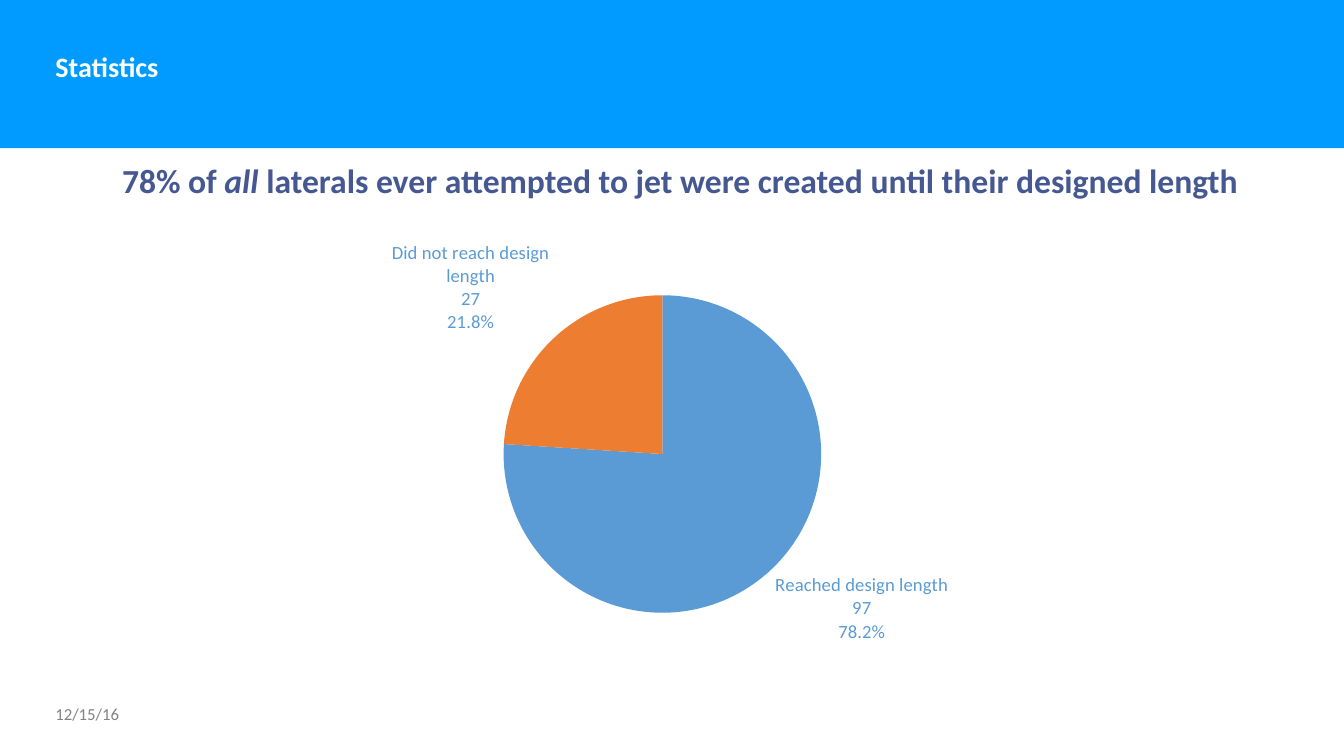
from dataclasses import dataclass

from lxml import etree
from pptx import Presentation
from pptx.chart.data import CategoryChartData
from pptx.dml.color import RGBColor
from pptx.enum.chart import XL_CHART_TYPE, XL_LABEL_POSITION
from pptx.enum.shapes import MSO_SHAPE
from pptx.enum.text import MSO_ANCHOR, MSO_AUTO_SIZE, PP_ALIGN
from pptx.oxml.ns import qn
from pptx.util import Inches, Pt

PIE = XL_CHART_TYPE.PIE
OUTSIDE_END = XL_LABEL_POSITION.OUTSIDE_END
RECTANGLE = MSO_SHAPE.RECTANGLE
MIDDLE, TOP = MSO_ANCHOR.MIDDLE, MSO_ANCHOR.TOP
NO_AUTOFIT = MSO_AUTO_SIZE.NONE
LEFT, CENTER = PP_ALIGN.LEFT, PP_ALIGN.CENTER


@dataclass(frozen=True)
class Theme:
    font: str = "Calibri"
    band: str = "019BFF"
    title: str = "FFFFFF"
    headline: str = "465891"
    date: str = "828282"
    label: str = "5B9BD5"
    slices: tuple = ("5B9BD5", "ED7D31")
    title_size: float = 20
    headline_size: float = 24
    date_size: float = 12
    label_size: float = 13.3


THEME = Theme()
SLIDE_WIDTH, SLIDE_HEIGHT = 13.33, 7.5
OUTCOMES = [
    ("Reached design length", 76, "97", "78.2%"),
    ("Did not reach design length", 24, "27", "21.8%"),
]


def style_font(font, size, color, bold=False, italic=False):
    font.name = THEME.font
    font.size = Pt(size)
    font.color.rgb = RGBColor.from_string(color)
    font.bold = bold
    font.italic = italic


def place(shape, box):
    shape.left, shape.top, shape.width, shape.height = map(Inches, box)


def write_line(shape, runs, size, color, align, anchor, bold=False):
    frame = shape.text_frame
    frame.word_wrap = True
    frame.auto_size = NO_AUTOFIT
    frame.vertical_anchor = anchor
    paragraph = frame.paragraphs[0]
    paragraph.alignment = align
    paragraph.space_before = Pt(0)
    for text, italic in runs:
        run = paragraph.add_run()
        run.text = text
        style_font(run.font, size, color, bold, italic)
    return paragraph


def add_header(slide, box):
    left, top, width, height = box
    band = slide.shapes.add_shape(RECTANGLE, *map(Inches, box))
    band.shadow.inherit = False
    band.fill.solid()
    band.fill.fore_color.rgb = RGBColor.from_string(THEME.band)
    band.line.fill.background()
    slide.shapes.title.element.addprevious(band.element)
    title = slide.shapes.title
    place(title, (left + 0.45, top + 0.49, 4.42, 0.38))
    paragraph = write_line(title, [("Statistics", False)], THEME.title_size,
                           THEME.title, LEFT, MIDDLE, bold=True)
    paragraph.line_spacing = 0.9


def add_headline(slide, box):
    body = slide.placeholders[1]
    place(body, box)
    properties = body.text_frame.paragraphs[0]._p.get_or_add_pPr()
    properties.set("marL", "0")
    properties.set("indent", "0")
    etree.SubElement(properties, qn("a:buNone"))
    runs = [
        ("78% of ", False),
        ("all", True),
        (" laterals ever attempted to jet were created until their designed length", False),
    ]
    write_line(body, runs, THEME.headline_size, THEME.headline, CENTER, TOP, bold=True)


def set_plot_area(chart, fractions):
    plot_area = chart._chartSpace.chart.plotArea
    for old_layout in plot_area.findall(qn("c:layout")):
        plot_area.remove(old_layout)
    layout = etree.Element(qn("c:layout"))
    manual = etree.SubElement(layout, qn("c:manualLayout"))
    settings = [("layoutTarget", "inner"), ("xMode", "edge"), ("yMode", "edge")]
    settings += zip("xywh", fractions)
    for tag, value in settings:
        etree.SubElement(manual, qn(f"c:{tag}")).set("val", str(value))
    plot_area.insert(0, layout)


def add_label(point, lines):
    label = point.data_label
    frame = label.text_frame
    for index, text in enumerate(lines):
        paragraph = frame.paragraphs[0] if index == 0 else frame.add_paragraph()
        run = paragraph.add_run()
        run.text = text
        style_font(run.font, THEME.label_size, THEME.label)
    label.position = OUTSIDE_END


def add_outcome_pie(slide, box):
    data = CategoryChartData()
    data.categories = [outcome[0] for outcome in OUTCOMES]
    data.add_series("Series 1", [outcome[1] for outcome in OUTCOMES])
    chart = slide.shapes.add_chart(PIE, *map(Inches, box), data).chart
    chart.has_title = False
    chart.has_legend = False
    style_font(chart.font, THEME.label_size, THEME.label)
    set_plot_area(chart, (0.34, 0.17, 0.36, 0.66))
    plot = chart.plots[0]
    plot.vary_by_categories = True
    plot.has_data_labels = True
    labels = plot.data_labels
    labels.show_value = False
    labels.show_category_name = True
    labels.show_percentage = True
    labels.position = OUTSIDE_END
    points = plot.series[0].points
    for index, (category, _, count, share) in enumerate(OUTCOMES):
        point = points[index]
        point.format.fill.solid()
        point.format.fill.fore_color.rgb = RGBColor.from_string(THEME.slices[index])
        add_label(point, (category, count, share))


def add_date(slide, box):
    date = slide.shapes.add_textbox(*map(Inches, box))
    write_line(date, [("12/15/16", False)], THEME.date_size, THEME.date, LEFT, MIDDLE)


def main():
    presentation = Presentation()
    presentation.slide_width = Inches(SLIDE_WIDTH)
    presentation.slide_height = Inches(SLIDE_HEIGHT)
    slide = presentation.slides.add_slide(presentation.slide_layouts[1])
    add_header(slide, (0, 0, SLIDE_WIDTH, 1.47))
    add_headline(slide, (0.26, 1.54, 12.97, 4.76))
    add_date(slide, (0.45, 6.92, 2.9, 0.33))
    add_outcome_pie(slide, (2.02, 2.1, 8.75, 4.81))
    presentation.save("out.pptx")


if __name__ == "__main__":
    main()
